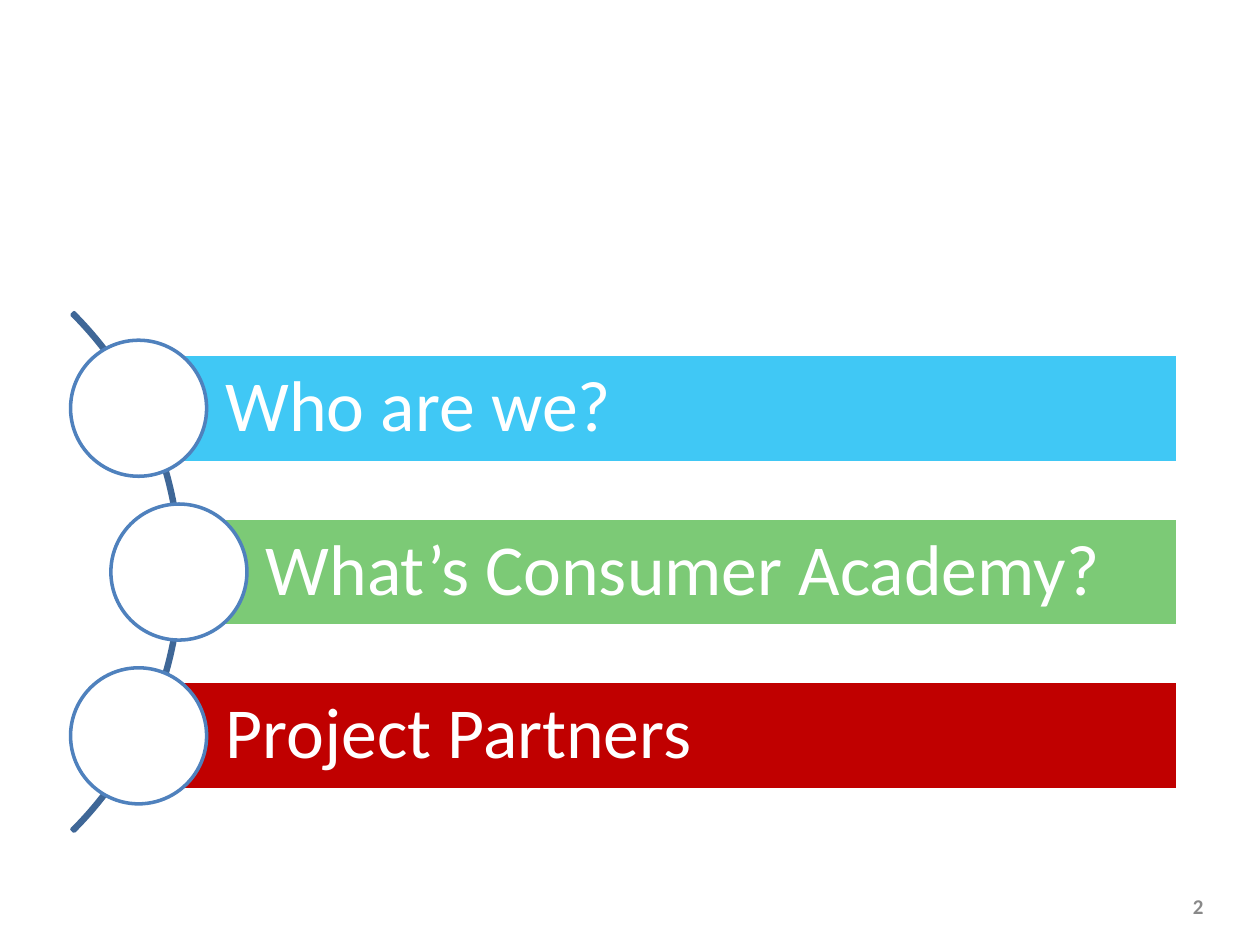
from dataclasses import dataclass

from pptx import Presentation
from pptx.dml.color import RGBColor
from pptx.enum.shapes import MSO_SHAPE as Shape
from pptx.enum.text import MSO_ANCHOR as Anchor, PP_ALIGN as Align
from pptx.shapes.autoshape import Shape as AutoShape
from pptx.slide import Slide
from pptx.util import Inches, Pt


@dataclass(frozen=True)
class Theme:
    font: str = "Calibri"
    white: str = "FFFFFF"
    arc: str = "3F6797"
    ring: str = "4F81BD"
    number: str = "898989"
    item_size: int = 41
    number_size: int = 12
    line_width: int = 2


@dataclass(frozen=True)
class AgendaItem:
    text: str
    color: str
    center_x: float


THEME = Theme()
ITEMS = [
    AgendaItem("Who are we?", "40C8F5", 1.1),
    AgendaItem("What’s Consumer Academy?", "7CCA76", 1.42),
    AgendaItem("Project Partners", "C00000", 1.1),
]
FIRST_CENTER_Y, PITCH = 3.24, 1.3
BAR_RIGHT, BAR_HEIGHT = 9.35, 0.86
CIRCLE_SIZE = 1.08
ARC_LEFT, ARC_SIZE = -4.38, 5.82


def rgb(color: str) -> RGBColor:
    return RGBColor.from_string(color)


def add_outlined(s: Slide, kind: Shape, left: float, top: float, width: float,
                 height: float, line: str, fill: str | None = None) -> AutoShape:
    sp = s.shapes.add_shape(kind, Inches(left), Inches(top), Inches(width), Inches(height))
    sp.shadow.inherit = False
    if fill:
        sp.fill.solid()
        sp.fill.fore_color.rgb = rgb(fill)
    else:
        sp.fill.background()
    sp.line.color.rgb = rgb(line)
    sp.line.width = Pt(THEME.line_width)
    return sp


def set_text(sp: AutoShape, text: str, size: int, color: str, align: Align,
             bold: bool = False) -> None:
    tf = sp.text_frame
    tf.text = text
    tf.word_wrap = True
    tf.vertical_anchor = Anchor.MIDDLE
    p = tf.paragraphs[0]
    p.alignment = align
    font = p.runs[0].font
    font.name, font.size, font.bold = THEME.font, Pt(size), bold
    font.color.rgb = rgb(color)


def add_arc(s: Slide) -> None:
    center_y = FIRST_CENTER_Y + PITCH * (len(ITEMS) - 1) / 2
    arc = add_outlined(s, Shape.BLOCK_ARC, ARC_LEFT, center_y - ARC_SIZE / 2,
                       ARC_SIZE, ARC_SIZE, THEME.arc)
    for i, value in enumerate((189, 27, 0.004)):
        arc.adjustments[i] = value


def add_item(s: Slide, item: AgendaItem, center_y: float) -> None:
    """Draw a bar that starts at the centre of its circle."""
    bar = add_outlined(s, Shape.RECTANGLE, item.center_x, center_y - BAR_HEIGHT / 2,
                       BAR_RIGHT - item.center_x, BAR_HEIGHT, THEME.white, item.color)
    set_text(bar, item.text, THEME.item_size, THEME.white, Align.LEFT)
    tf = bar.text_frame
    tf.margin_left = Inches(0.69)
    tf.margin_top = tf.margin_right = tf.margin_bottom = Inches(0.11)
    tf.paragraphs[0].line_spacing = 0.9
    radius = CIRCLE_SIZE / 2
    add_outlined(s, Shape.OVAL, item.center_x - radius, center_y - radius,
                 CIRCLE_SIZE, CIRCLE_SIZE, THEME.ring, THEME.white)


def add_slide_number(s: Slide, number: int) -> None:
    box = s.shapes.add_textbox(Inches(9.02), Inches(7.06), Inches(0.98), Inches(0.26))
    set_text(box, str(number), THEME.number_size, THEME.number, Align.CENTER, bold=True)


def main() -> None:
    prs = Presentation()
    prs.slide_width, prs.slide_height = Inches(10), Inches(7.5)
    s = prs.slides.add_slide(prs.slide_layouts[6])
    add_slide_number(s, 2)
    add_arc(s)
    for i, item in enumerate(ITEMS):
        add_item(s, item, FIRST_CENTER_Y + i * PITCH)
    prs.save("out.pptx")


if __name__ == "__main__":
    main()
